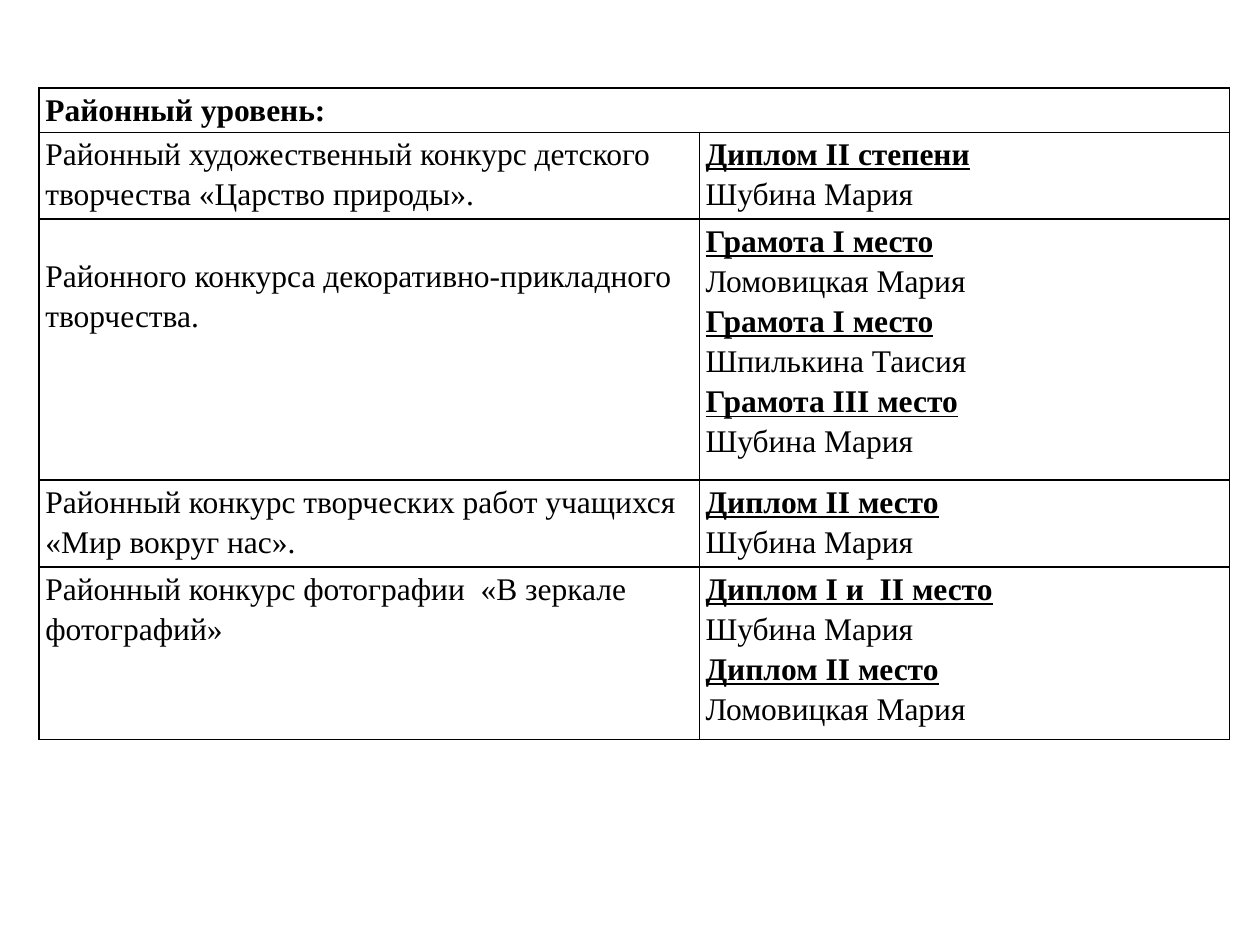
from lxml import etree
from pptx import Presentation
from pptx import util as u
from pptx.dml.color import RGBColor
from pptx.enum import text
from pptx.oxml import ns

# Content: each contest with its (award, winner) pairs
HEADING = "Районный уровень:"
CONTESTS = [
    ("Районный художественный конкурс детского творчества «Царство природы».",
     [("Диплом II степени", "Шубина Мария")]),
    ("Районного конкурса декоративно-прикладного творчества.",
     [("Грамота I место", "Ломовицкая Мария"),
      ("Грамота I место", "Шпилькина Таисия"),
      ("Грамота III место", "Шубина Мария")]),
    ("Районный конкурс творческих работ учащихся «Мир вокруг нас».",
     [("Диплом II место", "Шубина Мария")]),
    ("Районный конкурс фотографии  «В зеркале фотографий»",
     [("Диплом I и  II место", "Шубина Мария"),
      ("Диплом II место", "Ломовицкая Мария")]),
]

THEME = {"font": "Times New Roman", "size": 18, "ink": "000000",
         "paper": "FFFFFF", "border": 1, "leading": 1.15}
PLAIN = {"bold": False, "underline": False}
BOLD = {"bold": True, "underline": False}
AWARD = {"bold": True, "underline": True}

# Layout in inches
LEFT, TOP = 0.31, 0.7
COLUMNS = [5.24, 4.21]
ROWS = [0.35, 0.69, 2.07, 0.69, 1.37]
INSETS = {"margin_left": 0.05, "margin_right": 0.05,
          "margin_top": 0, "margin_bottom": 0}
LOWERED_CONTEST, LOWERED_TOP = 1, 0.28


def draw_borders(cell):
    props = cell._tc.get_or_add_tcPr()
    for position, side in enumerate(("lnL", "lnR", "lnT", "lnB")):
        line = etree.Element(ns.qn("a:" + side), w=str(u.Pt(THEME["border"])))
        fill = etree.SubElement(line, ns.qn("a:solidFill"))
        etree.SubElement(fill, ns.qn("a:srgbClr"), val=THEME["ink"])
        props.insert(position, line)


def fill_cell(cell, lines, align=text.PP_ALIGN.LEFT):
    """Write (wording, format) lines, one paragraph each."""
    for name, inset in INSETS.items():
        setattr(cell, name, u.Inches(inset))
    for number, (wording, style) in enumerate(lines):
        frame = cell.text_frame
        paragraph = frame.add_paragraph() if number else frame.paragraphs[0]
        paragraph.alignment = align
        paragraph.line_spacing = THEME["leading"]
        run = paragraph.add_run()
        run.text = wording
        font = {"name": THEME["font"], "size": u.Pt(THEME["size"]), **style}
        for name, value in font.items():
            setattr(run.font, name, value)
        run.font.color.rgb = RGBColor.from_string(THEME["ink"])


def main():
    deck = Presentation()
    deck.slide_width, deck.slide_height = u.Inches(10), u.Inches(7.5)
    slide = deck.slides.add_slide(deck.slide_layouts[6])

    # Table grid
    awards = slide.shapes.add_table(
        len(ROWS), len(COLUMNS), u.Inches(LEFT), u.Inches(TOP),
        u.Inches(sum(COLUMNS)), u.Inches(sum(ROWS))).table
    awards.first_row = awards.horz_banding = False
    for column, width in zip(awards.columns, COLUMNS):
        column.width = u.Inches(width)
    for row, height in zip(awards.rows, ROWS):
        row.height = u.Inches(height)
    for cell in awards.iter_cells():
        cell.fill.solid()
        cell.fill.fore_color.rgb = RGBColor.from_string(THEME["paper"])
        draw_borders(cell)

    # Heading across both columns
    awards.cell(0, 0).merge(awards.cell(0, 1))
    fill_cell(awards.cell(0, 0), [(HEADING, BOLD)])

    # Contests and their winners
    for row, (contest, results) in enumerate(CONTESTS, start=1):
        lines = [line for award, winner in results
                 for line in ((award, AWARD), (winner, PLAIN))]
        fill_cell(awards.cell(row, 0), [(contest, PLAIN)])
        fill_cell(awards.cell(row, 1), lines, text.PP_ALIGN.JUSTIFY)
    awards.cell(LOWERED_CONTEST + 1, 0).margin_top = u.Inches(LOWERED_TOP)

    deck.save("out.pptx")


if __name__ == "__main__":
    main()
